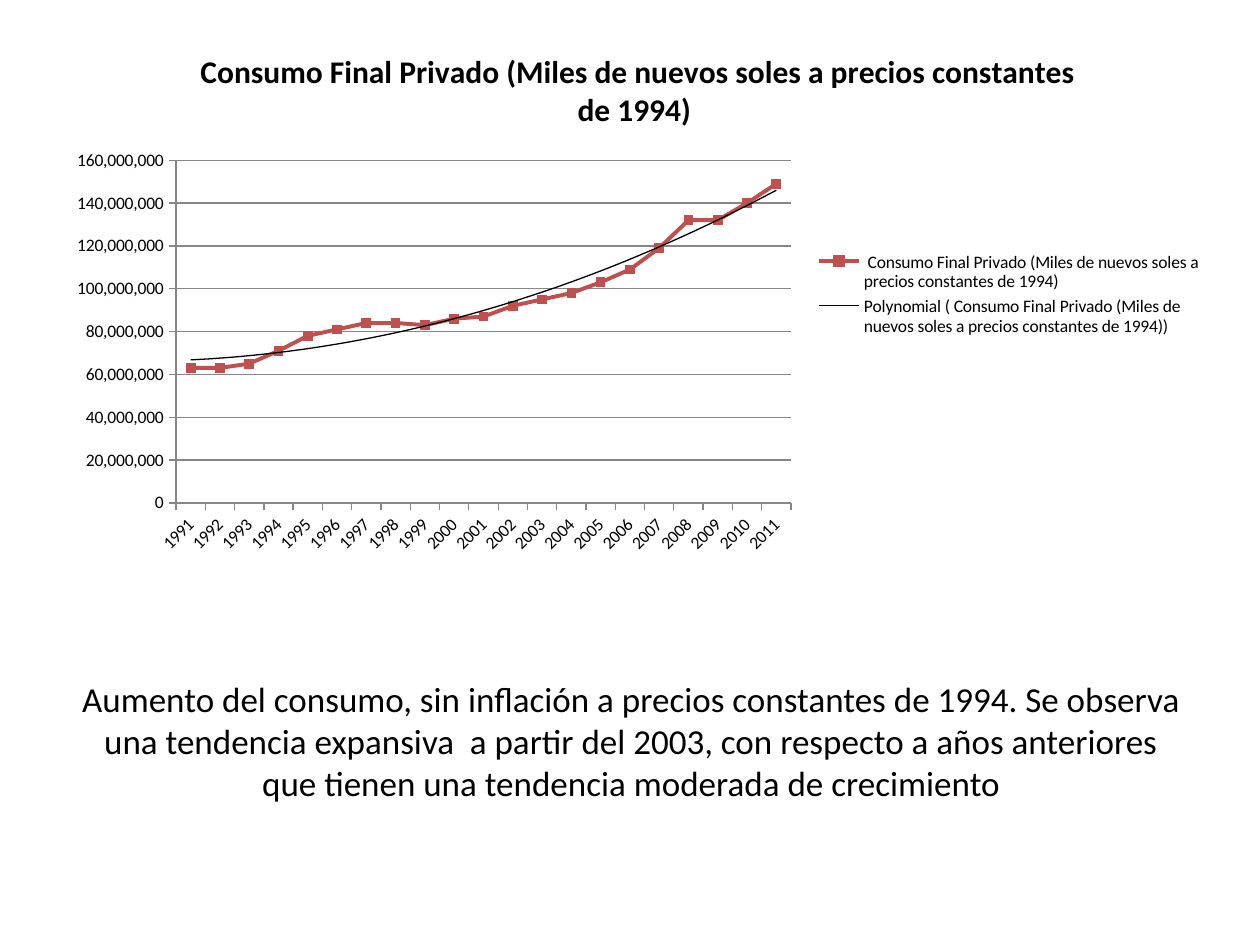
from dataclasses import dataclass

from lxml.etree import SubElement
from pptx import Presentation
from pptx.chart.data import CategoryChartData
from pptx.dml.color import RGBColor
from pptx.enum.chart import (XL_CHART_TYPE, XL_LEGEND_POSITION,
                             XL_MARKER_STYLE, XL_TICK_MARK)
from pptx.enum.text import MSO_ANCHOR, PP_ALIGN
from pptx.oxml import parse_xml
from pptx.oxml.ns import nsdecls, qn
from pptx.util import Inches, Pt


@dataclass(frozen=True)
class Theme:
    font: str = "Calibri"
    text: RGBColor = RGBColor(0, 0, 0)
    grid: RGBColor = RGBColor(0x86, 0x86, 0x86)
    series: RGBColor = RGBColor(0xC0, 0x50, 0x4D)
    body: Pt = Pt(20)
    head: Pt = Pt(18)
    label: Pt = Pt(10)


@dataclass(frozen=True)
class Box:
    left: float
    top: float
    width: float
    height: float

    def inches(self) -> tuple:
        return tuple(map(Inches, (self.left, self.top, self.width, self.height)))


THEME = Theme()
NAME = " Consumo Final Privado (Miles de nuevos soles a precios constantes de 1994)"
NOTE = ("Aumento del consumo, sin inflación a precios constantes de 1994. "
        "Se observa una tendencia expansiva  a partir del 2003, con respecto a "
        "años anteriores que tienen una tendencia moderada de crecimiento")
FIRST_YEAR = 1991
MILLIONS = (63, 63, 65, 71, 78, 81, 84, 84, 83, 86, 87,
            92, 95, 98, 103, 109, 119, 132, 132, 140, 149)


def style(font, size: Pt, bold: bool = False) -> None:
    font.name, font.size, font.bold = THEME.font, size, bold
    font.color.rgb = THEME.text


def add_run(frame, text: str, size: Pt, bold: bool = False) -> None:
    para = frame.paragraphs[0]
    para.alignment = PP_ALIGN.CENTER
    run = para.add_run()
    run.text = text
    style(run.font, size, bold)


def set_line(line, color: RGBColor, width: float) -> None:
    line.color.rgb = color
    line.width = Pt(width)


def add_trend(series) -> None:
    """Add a thin second-degree polynomial trend line."""
    trend = parse_xml(
        f'<c:trendline {nsdecls("c", "a")}><c:spPr><a:ln w="{Pt(0.75)}">'
        f'<a:solidFill><a:srgbClr val="{THEME.text}"/></a:solidFill></a:ln></c:spPr>'
        '<c:trendlineType val="poly"/><c:order val="2"/>'
        '<c:dispRSqr val="0"/><c:dispEq val="0"/></c:trendline>')
    series._element.find(qn("c:cat")).addprevious(trend)


def place_plot(chart, area: Box) -> None:
    """Fix the inner plot area, in fractions of the chart."""
    plot = chart._chartSpace.chart.plotArea
    layout = plot.find(qn("c:layout"))
    if layout is None:
        layout = plot.makeelement(qn("c:layout"))
        plot.insert(0, layout)
    manual = SubElement(layout, qn("c:manualLayout"))
    parts = (("layoutTarget", "inner"), ("xMode", "edge"), ("yMode", "edge"),
             ("x", area.left), ("y", area.top), ("w", area.width), ("h", area.height))
    for tag, value in parts:
        SubElement(manual, qn(f"c:{tag}")).set("val", str(value))


def add_graph(slide, box: Box) -> None:
    data = CategoryChartData(number_format="#,##0")
    data.categories = [str(FIRST_YEAR + i) for i in range(len(MILLIONS))]
    data.add_series(NAME, [m * 1_000_000 for m in MILLIONS])
    chart = slide.shapes.add_chart(XL_CHART_TYPE.LINE_MARKERS, *box.inches(), data).chart
    style(chart.font, THEME.label)
    place_plot(chart, Box(0.105, 0.25, 0.53, 0.64))

    chart.has_title = True
    add_run(chart.chart_title.text_frame, NAME, THEME.head, True)
    chart.chart_title.include_in_layout = False
    chart.has_legend = True
    chart.legend.position = XL_LEGEND_POSITION.RIGHT
    chart.legend.include_in_layout = False
    style(chart.legend.font, THEME.label)

    for axis in (chart.category_axis, chart.value_axis):
        axis.major_tick_mark = XL_TICK_MARK.OUTSIDE
        axis.minor_tick_mark = XL_TICK_MARK.NONE
        set_line(axis.format.line, THEME.grid, 0.75)
        style(axis.tick_labels.font, THEME.label)
    scale = chart.value_axis
    scale.minimum_scale, scale.maximum_scale, scale.major_unit = 0, 160e6, 20e6
    scale.tick_labels.number_format = "#,##0"
    scale.tick_labels.number_format_is_linked = False
    scale.has_major_gridlines = True
    set_line(scale.major_gridlines.format.line, THEME.grid, 0.75)

    chart.plots[0].vary_by_categories = False
    series = chart.plots[0].series[0]
    series.smooth = False
    set_line(series.format.line, THEME.series, 2.25)
    mark = series.marker
    mark.style, mark.size = XL_MARKER_STYLE.SQUARE, 5
    mark.format.fill.solid()
    mark.format.fill.fore_color.rgb = THEME.series
    set_line(mark.format.line, THEME.series, 0.75)
    add_trend(series)


def add_note(slide, box: Box) -> None:
    title = slide.shapes.title
    title.left, title.top, title.width, title.height = box.inches()
    frame = title.text_frame
    frame.word_wrap = True
    frame.vertical_anchor = MSO_ANCHOR.MIDDLE
    add_run(frame, NOTE, THEME.body)


def main() -> None:
    deck = Presentation()
    deck.slide_width, deck.slide_height = Inches(10), Inches(7.5)
    slide = deck.slides.add_slide(deck.slide_layouts[5])
    add_note(slide, Box(0.51, 5.25, 9, 1.25))
    add_graph(slide, Box(0.43, 0.21, 9.21, 4.25))
    deck.save("out.pptx")


if __name__ == "__main__":
    main()
